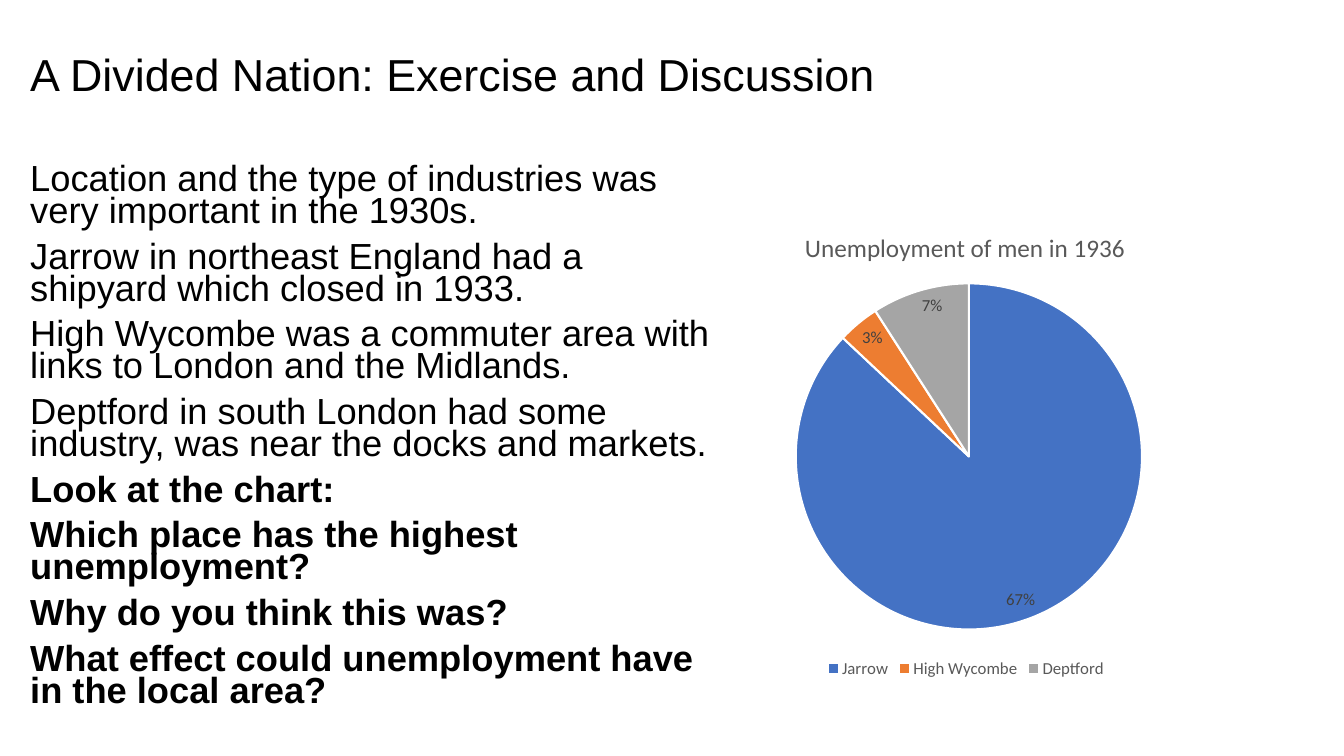
import pptx
import pptx.util
import pptx.chart.data
import pptx.dml.color
import pptx.enum.chart
import pptx.enum.text
from lxml import etree

Pt = pptx.util.Pt
RGBColor = pptx.dml.color.RGBColor
BLACK = RGBColor(0x00, 0x00, 0x00)
WHITE = RGBColor(0xFF, 0xFF, 0xFF)
GREY_TEXT = RGBColor(0x59, 0x59, 0x59)
LABEL_TEXT = RGBColor(0x40, 0x40, 0x40)
BLUE = RGBColor(0x44, 0x72, 0xC4)
ORANGE = RGBColor(0xED, 0x7D, 0x31)
GREY = RGBColor(0xA5, 0xA5, 0xA5)

TITLE = "A Divided Nation: Exercise and Discussion"
STATEMENTS = [
    "Location and the type of industries was very important in the 1930s.",
    "Jarrow in northeast England had a shipyard which closed in 1933.",
    "High Wycombe was a commuter area with links to London and the Midlands.",
    "Deptford in south London had some industry, was near the docks and markets.",
]
QUESTIONS = [
    "Look at the chart:",
    "Which place has the highest unemployment?",
    "Why do you think this was?",
    "What effect could unemployment have in the local area?",
]
UNEMPLOYMENT = [("Jarrow", 0.67, BLUE), ("High Wycombe", 0.03, ORANGE), ("Deptford", 0.07, GREY)]

prs = pptx.Presentation()
prs.slide_width = pptx.util.Inches(13.33)
prs.slide_height = pptx.util.Inches(7.5)
s = prs.slides.add_slide(prs.slide_layouts[1])


def box(left, top, width, height):
    """Turn percentages of the slide's size into lengths."""
    col, row = prs.slide_width / 100, prs.slide_height / 100
    return int(left * col), int(top * row), int(width * col), int(height * row)


def set_font(font, name, size, color):
    font.name, font.size = name, Pt(size)
    font.color.rgb = color


# Title
sp = s.shapes.title
sp.left, sp.top, sp.width, sp.height = box(1.5, 2.6, 91.6, 15.2)
tf = sp.text_frame
tf.auto_size = pptx.enum.text.MSO_AUTO_SIZE.NONE
tf.vertical_anchor = pptx.enum.text.MSO_ANCHOR.MIDDLE
p = tf.paragraphs[0]
p.alignment = pptx.enum.text.PP_ALIGN.LEFT
p.line_spacing = 0.9
r = p.add_run()
r.text = TITLE
set_font(r.font, "Arial", 32, BLACK)

# Statements and questions
sp = s.placeholders[1]
sp.left, sp.top, sp.width, sp.height = box(1.5, 21.33, 53, 76)
tf = sp.text_frame
tf.auto_size = pptx.enum.text.MSO_AUTO_SIZE.NONE
for i, text in enumerate(STATEMENTS + QUESTIONS):
    p = tf.paragraphs[0] if i == 0 else tf.add_paragraph()
    p.line_spacing = 0.73
    p.space_before = Pt(10)
    pPr = p._p.get_or_add_pPr()
    pPr.set("marL", "0")
    pPr.set("indent", "0")
    etree.SubElement(pPr, pptx.oxml.ns.qn("a:buNone"))
    r = p.add_run()
    r.text = text
    r.font.bold = text in QUESTIONS
    set_font(r.font, "Arial", 25.9, BLACK)

# Pie chart
data = pptx.chart.data.CategoryChartData(number_format="0%")
data.categories = [place for place, share, color in UNEMPLOYMENT]
data.add_series("Series 1", [share for place, share, color in UNEMPLOYMENT])
chart = s.shapes.add_chart(
    pptx.enum.chart.XL_CHART_TYPE.PIE, *box(50.63, 26.67, 42.5, 63.6), data).chart
set_font(chart.font, "Calibri", 10, BLACK)

chart.has_title = True
r = chart.chart_title.text_frame.paragraphs[0].add_run()
r.text = "Unemployment of men in 1936"
r.font.bold = False
set_font(r.font, "Calibri", 18, GREY_TEXT)

chart.has_legend = True
chart.legend.position = pptx.enum.chart.XL_LEGEND_POSITION.BOTTOM
chart.legend.include_in_layout = False
set_font(chart.legend.font, "Calibri", 12, GREY_TEXT)

plot = chart.plots[0]
plot.vary_by_categories = True
plot.has_data_labels = True
labels = plot.data_labels
labels.show_value = True
labels.show_percentage = False
labels.number_format = "0%"
labels.number_format_is_linked = False
labels.position = pptx.enum.chart.XL_LABEL_POSITION.INSIDE_END
set_font(labels.font, "Calibri", 12, LABEL_TEXT)
for i, (place, share, color) in enumerate(UNEMPLOYMENT):
    fmt = plot.series[0].points[i].format
    fmt.fill.solid()
    fmt.fill.fore_color.rgb = color
    fmt.line.color.rgb = WHITE
    fmt.line.width = Pt(1.5)

# Places of the title and the pie, as shares of the chart
title_place = {"xMode": "edge", "yMode": "edge", "x": 0.21, "y": 0.05}
pie_place = {"layoutTarget": "inner", "xMode": "edge", "yMode": "edge",
             "x": 0.2, "y": 0.17, "w": 0.61, "h": 0.72}
qn = pptx.oxml.ns.qn
plot_area = chart._chartSpace.chart.plotArea
for parent, place in ((chart.chart_title._element, title_place), (plot_area, pie_place)):
    layout = parent.find(qn("c:layout"))
    if layout is None:
        layout = etree.Element(qn("c:layout"))
        parent.insert(1 if place is title_place else 0, layout)
    manual = etree.SubElement(layout, qn("c:manualLayout"))
    for key, value in place.items():
        etree.SubElement(manual, qn("c:" + key)).set("val", str(value))

prs.save("out.pptx")
